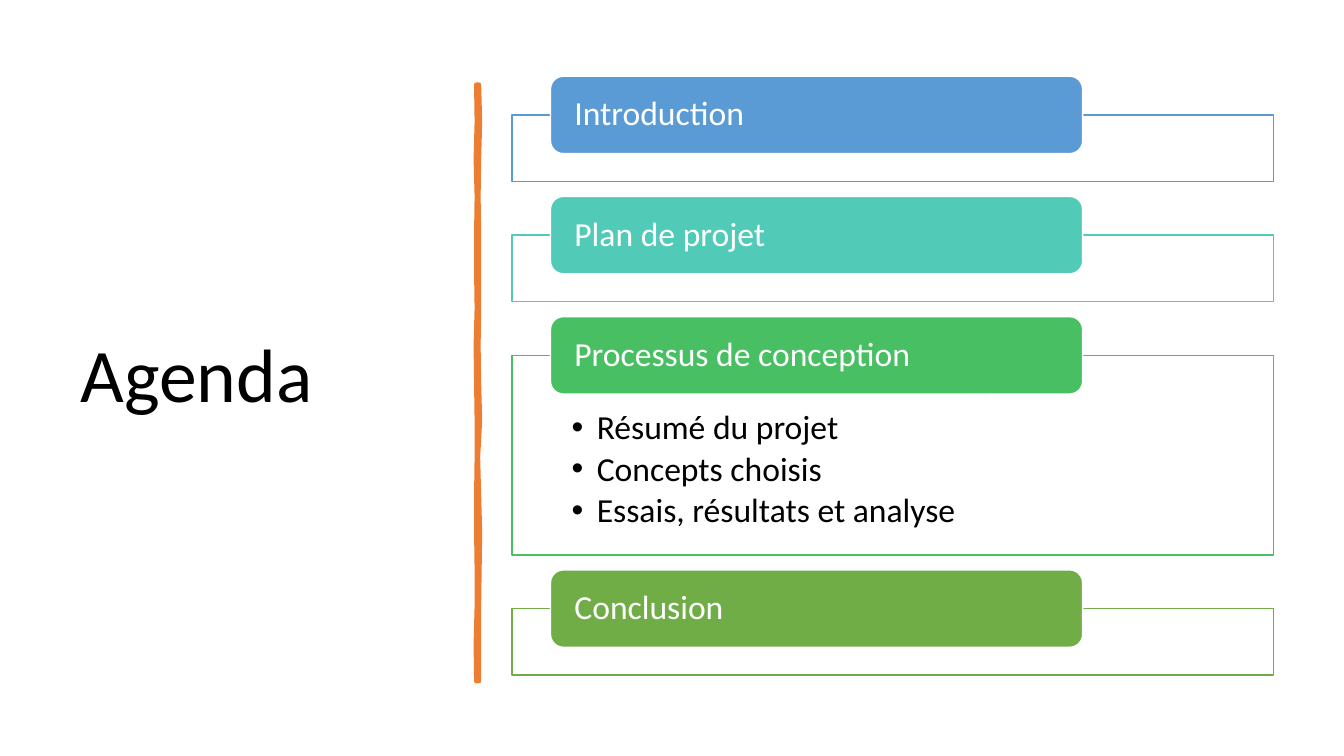
from pptx import Presentation, util as u
from pptx.dml.color import RGBColor
from pptx.enum import shapes, text
from pptx.oxml import parse_xml
from pptx.oxml.ns import nsdecls

THEME = dict(
    font="Calibri", head=54, body=24, ink="000000", paper="FFFFFF",
    rule="ED7D31", bars=["5B9BD5", "52CAB8", "49BF64", "70AD47"])

deck = Presentation()
deck.slide_width, deck.slide_height = u.Inches(13.33), u.Inches(7.5)
col, row = deck.slide_width / 100, deck.slide_height / 100
slide = deck.slides.add_slide(deck.slide_layouts[6])


def write(shape, lines, size, color, pad, anchor=text.MSO_ANCHOR.MIDDLE,
          after=0, bullet=False):
    """Fill a shape with paragraphs; pad is left, top, right, bottom in inches."""
    frame = shape.text_frame
    frame.word_wrap, frame.vertical_anchor = True, anchor
    (frame.margin_left, frame.margin_top,
     frame.margin_right, frame.margin_bottom) = map(u.Inches, pad)
    for i, line in enumerate(lines):
        para = frame.add_paragraph() if i else frame.paragraphs[0]
        para.alignment = text.PP_ALIGN.LEFT
        para.line_spacing, para.space_after = 0.9, u.Pt(after)
        run = para.add_run()
        run.text = line
        run.font.name, run.font.size = THEME["font"], u.Pt(size)
        run.font.color.rgb = RGBColor.from_string(color)
        if bullet:
            props = para._p.get_or_add_pPr()
            props.set("marL", str(u.Inches(0.25)))
            props.set("indent", str(-u.Inches(0.25)))
            props.append(parse_xml(f'<a:buFont {nsdecls("a")} typeface="Arial"/>'))
            props.append(parse_xml(f'<a:buChar {nsdecls("a")} char="•"/>'))


def paint(shape, fill, line, width):
    shape.shadow.inherit = False
    shape.fill.solid()
    shape.fill.fore_color.rgb = RGBColor.from_string(fill)
    shape.line.color.rgb = RGBColor.from_string(line)
    shape.line.width = u.Pt(width)


# Title
title = slide.shapes.add_textbox(
    *map(int, (5.25 * col, 9.33 * row, 28.06 * col, 81.47 * row)))
write(title, ["Agenda"], THEME["head"], THEME["ink"], (0.1, 0.05, 0.1, 0.05))

# Hand-drawn rule: edge offsets from its axis, in hundredths of an inch
left = [-1.5, -1, -2, -1, -1.5, -1.5, -1, -2, -1.5, -1, -1, -1.5, -1.5, -1, -1, -2, -1.5]
right = [1, 2, 1, 0.5, 1, 1, 1, 0.5, 1, 2, 0, 1, 2, 1.5, 1, 1, 1]
axis, top, step = 35.56 * col, 11.2 * row, 4.93 * row
edge = [(axis + u.Inches(x / 100), top + i * step) for i, x in enumerate(right)]
back = [(axis + u.Inches(x / 100), top + i * step) for i, x in enumerate(left)]
pen = slide.shapes.build_freeform(*map(int, edge[0]))
pen.add_line_segments([(int(x), int(y)) for x, y in edge[1:] + back[::-1]])
paint(pen.convert_to_shape(), THEME["rule"], THEME["rule"], 3.25)

# Agenda: each box carries a tab centred on its top edge
topics = [
    ("Introduction", []),
    ("Plan de projet", []),
    ("Processus de conception",
     ["Résumé du projet", "Concepts choisis", "Essais, résultats et analyse"]),
    ("Conclusion", []),
]
low, high, gap, tab = 8.8, 26.4, 7.1, 10.24
y = 15.2
for (topic, points), color in zip(topics, THEME["bars"]):
    tall = high if points else low
    box = slide.shapes.add_shape(
        shapes.MSO_SHAPE.RECTANGLE,
        *map(int, (38.1 * col, y * row, 56.64 * col, tall * row)))
    paint(box, THEME["paper"], color, 1)
    if points:
        write(box, points, THEME["body"], THEME["ink"],
              (0.59, 0.55, 0.59, 0.19), anchor=text.MSO_ANCHOR.TOP,
              after=3.6, bullet=True)
    label = slide.shapes.add_shape(
        shapes.MSO_SHAPE.ROUNDED_RECTANGLE,
        *map(int, (40.96 * col, (y - tab / 2) * row, 39.6 * col, tab * row)))
    paint(label, color, THEME["paper"], 1)
    write(label, [topic], THEME["body"], THEME["paper"], (0.2, 0, 0.2, 0))
    y += tall + gap

deck.save("out.pptx")
